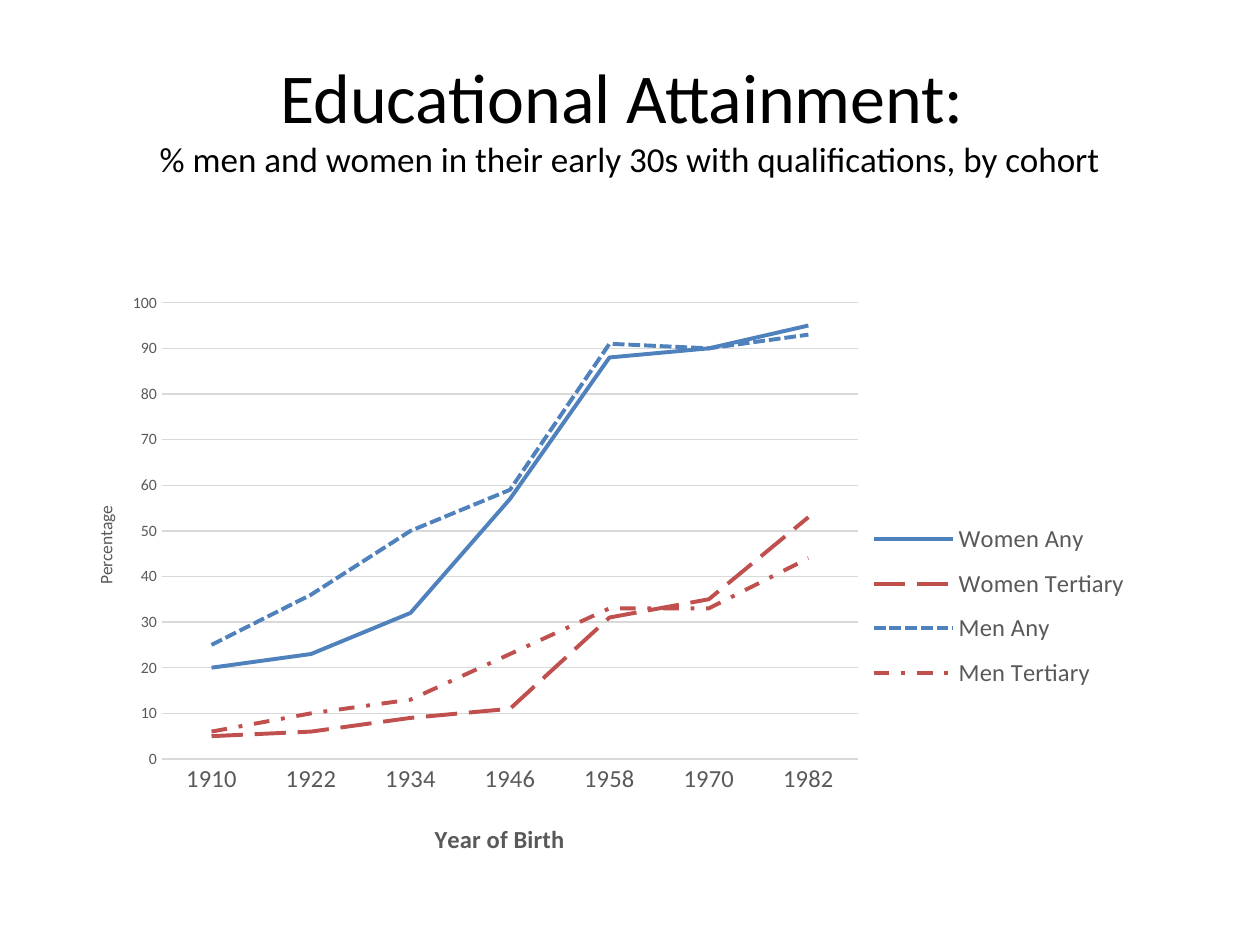
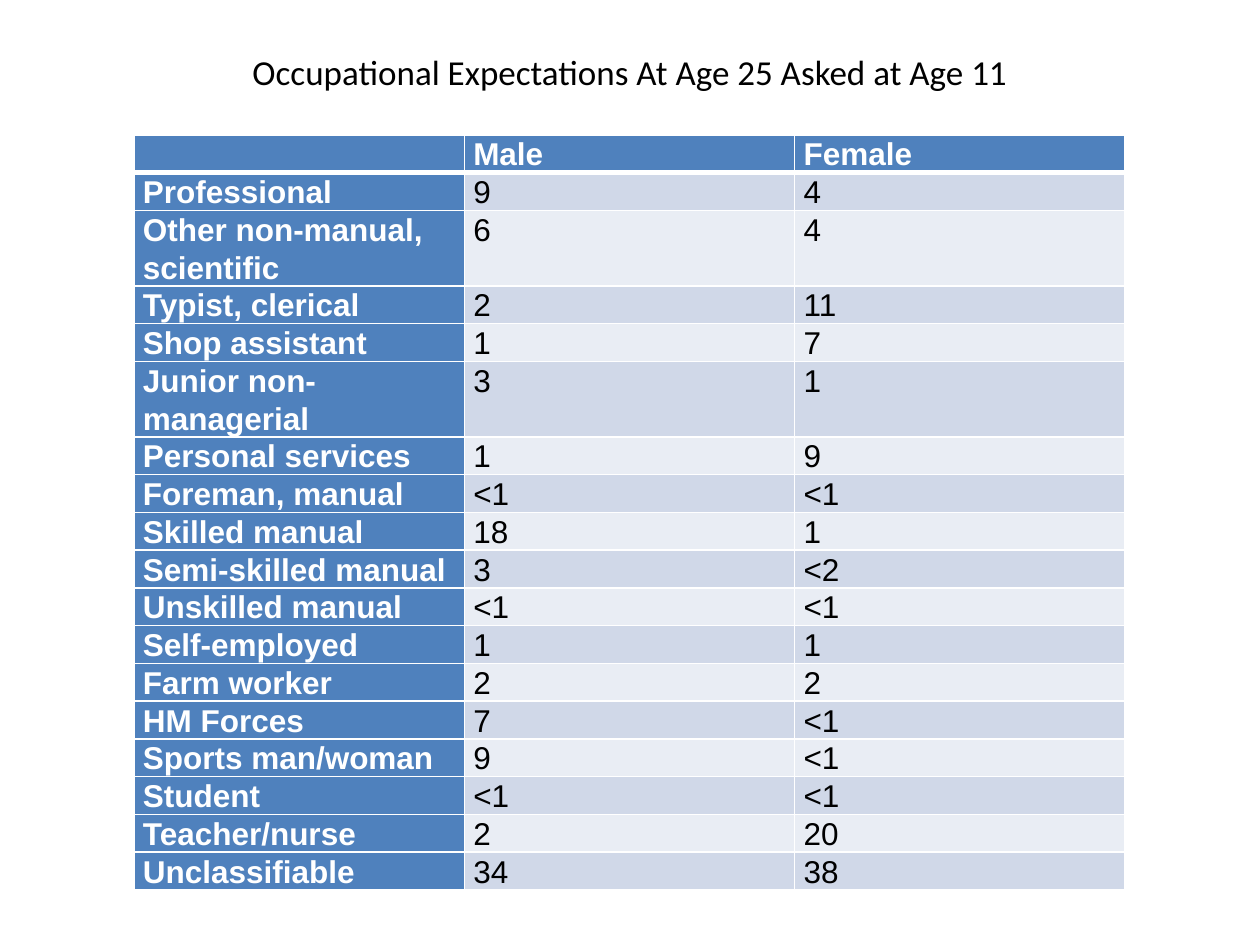
from dataclasses import dataclass

from lxml.etree import SubElement
from pptx import Presentation
from pptx.chart.data import CategoryChartData
from pptx.dml.color import RGBColor
from pptx.enum.chart import XL_CHART_TYPE as ChartType
from pptx.enum.chart import XL_LEGEND_POSITION as LegendPosition
from pptx.enum.chart import XL_TICK_MARK as TickMark
from pptx.enum.dml import MSO_LINE_DASH_STYLE as Dash
from pptx.enum.text import MSO_ANCHOR as Anchor
from pptx.enum.text import MSO_AUTO_SIZE as AutoSize
from pptx.enum.text import PP_ALIGN as Align
from pptx.oxml import parse_xml
from pptx.oxml.ns import nsdecls, qn
from pptx.util import Pt

# Content
ATTAINMENT_TITLE = [
    ("Educational Attainment: ", 40),
    ("% men and women in their early 30s with qualifications, by cohort", 20),
]
EXPECTATIONS_TITLE = [("Occupational Expectations At Age 25 Asked at Age 11", 20)]

BIRTH_YEARS = ["1910", "1922", "1934", "1946", "1958", "1970", "1982"]
ANY, TERTIARY = "4F81BD", "C0504D"
ATTAINMENT = [
    ("Women Any", [20, 23, 32, 57, 88, 90, 95], ANY, Dash.SOLID),
    ("Women Tertiary", [5, 6, 9, 11, 31, 35, 53], TERTIARY, Dash.LONG_DASH),
    ("Men Any", [25, 36, 50, 59, 91, 90, 93], ANY, Dash.SQUARE_DOT),
    ("Men Tertiary", [6, 10, 13, 23, 33, 33, 44], TERTIARY, Dash.DASH_DOT),
]

EXPECTATIONS = [
    ("", "Male", "Female"),
    ("Professional", "9", "4"),
    ("Other non-manual, scientific", "6", "4"),
    ("Typist, clerical", "2", "11"),
    ("Shop assistant", "1", "7"),
    ("Junior non-managerial", "3", "1"),
    ("Personal services", "1", "9"),
    ("Foreman, manual", "<1", "<1"),
    ("Skilled manual", "18", "1"),
    ("Semi-skilled manual", "3", "<2"),
    ("Unskilled manual", "<1", "<1"),
    ("Self-employed", "1", "1"),
    ("Farm worker", "2", "2"),
    ("HM Forces", "7", "<1"),
    ("Sports man/woman", "9", "<1"),
    ("Student", "<1", "<1"),
    ("Teacher/nurse", "2", "20"),
    ("Unclassifiable", "34", "38"),
]

# Places in px: left, top, width, height
PAGE_SIZE = (1260, 945)
ATTAINMENT_TITLE_BOX = (63, 38, 1134, 158)
EXPECTATIONS_TITLE_BOX = (63, 37, 1134, 68)
CHART_BOX = (84, 228, 1052, 674)
PLOT_BOX = (162, 303, 696, 456)
LEGEND_BOX = (872, 510, 262, 193)
YEAR_TITLE_AT = (430, 817)
PERCENT_TITLE_AT = (91, 503)
TABLE_BOX = (134, 135, 991, 576)


@dataclass(frozen=True)
class Theme:
    heading_font: str = "Calibri"
    table_font: str = "Arial"
    ink: str = "000000"
    white: str = "FFFFFF"
    chart_text: str = "595959"
    grid: str = "D9D9D9"
    header: str = "4F81BD"
    bands: tuple = ("D0D8E8", "E9EDF4")
    table_size: int = 18
    label_size: int = 14
    small_size: int = 10
    tick_size: int = 9


THEME = Theme()


def px(length):
    return round(length * 914400 / 126)


def set_font(font, name, size, color, bold=False):
    font.name, font.size, font.bold = name, Pt(size), bold
    font.color.rgb = RGBColor.from_string(color)


def set_line(line, color, width):
    line.color.rgb = RGBColor.from_string(color)
    line.width = Pt(width)


def add_page(deck, title_lines, box):
    page = deck.slides.add_slide(deck.slide_layouts[5])
    title = page.shapes.title
    title.left, title.top, title.width, title.height = map(px, box)
    frame = title.text_frame
    frame.word_wrap, frame.auto_size = True, AutoSize.NONE
    frame.vertical_anchor = Anchor.MIDDLE
    para = frame.paragraphs[0]
    para.alignment = Align.CENTER
    for index, (text, size) in enumerate(title_lines):
        if index:
            para.add_line_break()
        span = para.add_run()
        span.text = text
        set_font(span.font, THEME.heading_font, size, THEME.ink)
    return page


# Chart parts
def place(element, box, inner=False):
    """Fix a chart part at a px box, given as fractions of the chart."""
    left, top, width, height = CHART_BOX
    fractions = [(box[0] - left) / width, (box[1] - top) / height]
    fractions += [side / whole for side, whole in zip(box[2:], (width, height))]
    target = '<c:layoutTarget val="inner"/>' if inner else ""
    modes = '<c:xMode val="edge"/><c:yMode val="edge"/>'
    sides = "".join(f'<c:{name} val="{value:.3f}"/>' for name, value in zip("xywh", fractions))
    layout = parse_xml(
        f'<c:layout {nsdecls("c")}><c:manualLayout>{target}{modes}{sides}'
        "</c:manualLayout></c:layout>"
    )
    for old in element.findall(qn("c:layout")):
        element.remove(old)
    before = [child for child in element if child.tag in (qn("c:tx"), qn("c:legendPos"))]
    element.insert(element.index(before[-1]) + 1 if before else 0, layout)


def format_axis(axis, title, title_at, title_size, tick_size, bold):
    axis.major_tick_mark = axis.minor_tick_mark = TickMark.NONE
    set_font(axis.tick_labels.font, THEME.heading_font, tick_size, THEME.chart_text)
    frame = axis.axis_title.text_frame
    frame.text = title
    span = frame.paragraphs[0].runs[0]
    set_font(span.font, THEME.heading_font, title_size, THEME.chart_text, bold)
    place(axis.axis_title._element, title_at)


def add_attainment_chart(page):
    data = CategoryChartData(number_format="0")
    data.categories = BIRTH_YEARS
    for name, values, _, _ in ATTAINMENT:
        data.add_series(name, values)
    chart = page.shapes.add_chart(ChartType.LINE, *map(px, CHART_BOX), data).chart
    chart.has_title = False
    set_font(chart.font, THEME.heading_font, THEME.small_size, THEME.ink)
    chart.plots[0].vary_by_categories = False
    place(chart._chartSpace.chart.plotArea, PLOT_BOX, inner=True)

    for series, (_, _, color, dash) in zip(chart.plots[0].series, ATTAINMENT):
        series.smooth = False
        set_line(series.format.line, color, 2.25)
        series.format.line.dash_style = dash

    years, percent = chart.category_axis, chart.value_axis
    format_axis(years, "Year of Birth", YEAR_TITLE_AT, THEME.label_size, THEME.label_size, True)
    format_axis(percent, "Percentage", PERCENT_TITLE_AT, THEME.small_size, THEME.tick_size, False)
    percent.minimum_scale, percent.maximum_scale, percent.major_unit = 0, 100, 10
    percent.format.line.fill.background()
    for line in (years.format.line, percent.major_gridlines.format.line):
        set_line(line, THEME.grid, 0.75)

    chart.has_legend = True
    legend = chart.legend
    legend.position, legend.include_in_layout = LegendPosition.RIGHT, False
    set_font(legend.font, THEME.heading_font, THEME.label_size, THEME.chart_text)
    place(legend._element, LEGEND_BOX)


# Table parts
def set_borders(cell, bottom, top):
    widths = {"lnL": 1, "lnR": 1, "lnT": top, "lnB": bottom}
    for side, width in widths.items():
        line = SubElement(cell._tc.get_or_add_tcPr(), qn(f"a:{side}"), w=str(Pt(width)))
        SubElement(SubElement(line, qn("a:solidFill")), qn("a:srgbClr"), val=THEME.white)


def fill_cell(cell, text, row, column):
    heading = row == 0 or column == 0
    set_borders(cell, bottom=3 if row == 0 else 1, top=3 if row == 1 else 1)
    cell.fill.solid()
    color = THEME.header if heading else THEME.bands[(row - 1) % 2]
    cell.fill.fore_color.rgb = RGBColor.from_string(color)
    cell.margin_left = cell.margin_right = px(9)
    cell.margin_top = cell.margin_bottom = 0
    cell.text = text
    para = cell.text_frame.paragraphs[0]
    para.line_spacing, para.space_after = 1.07, Pt(8)
    ink = THEME.white if heading else THEME.ink
    set_font(para.font, THEME.table_font, THEME.table_size, ink, heading)


def add_expectations_table(page):
    rows, columns = len(EXPECTATIONS), len(EXPECTATIONS[0])
    table = page.shapes.add_table(rows, columns, *map(px, TABLE_BOX)).table
    for row, record in enumerate(EXPECTATIONS):
        for column, text in enumerate(record):
            fill_cell(table.cell(row, column), text, row, column)


def main():
    deck = Presentation()
    deck.slide_width, deck.slide_height = map(px, PAGE_SIZE)
    add_attainment_chart(add_page(deck, ATTAINMENT_TITLE, ATTAINMENT_TITLE_BOX))
    add_expectations_table(add_page(deck, EXPECTATIONS_TITLE, EXPECTATIONS_TITLE_BOX))
    deck.save("out.pptx")


if __name__ == "__main__":
    main()
